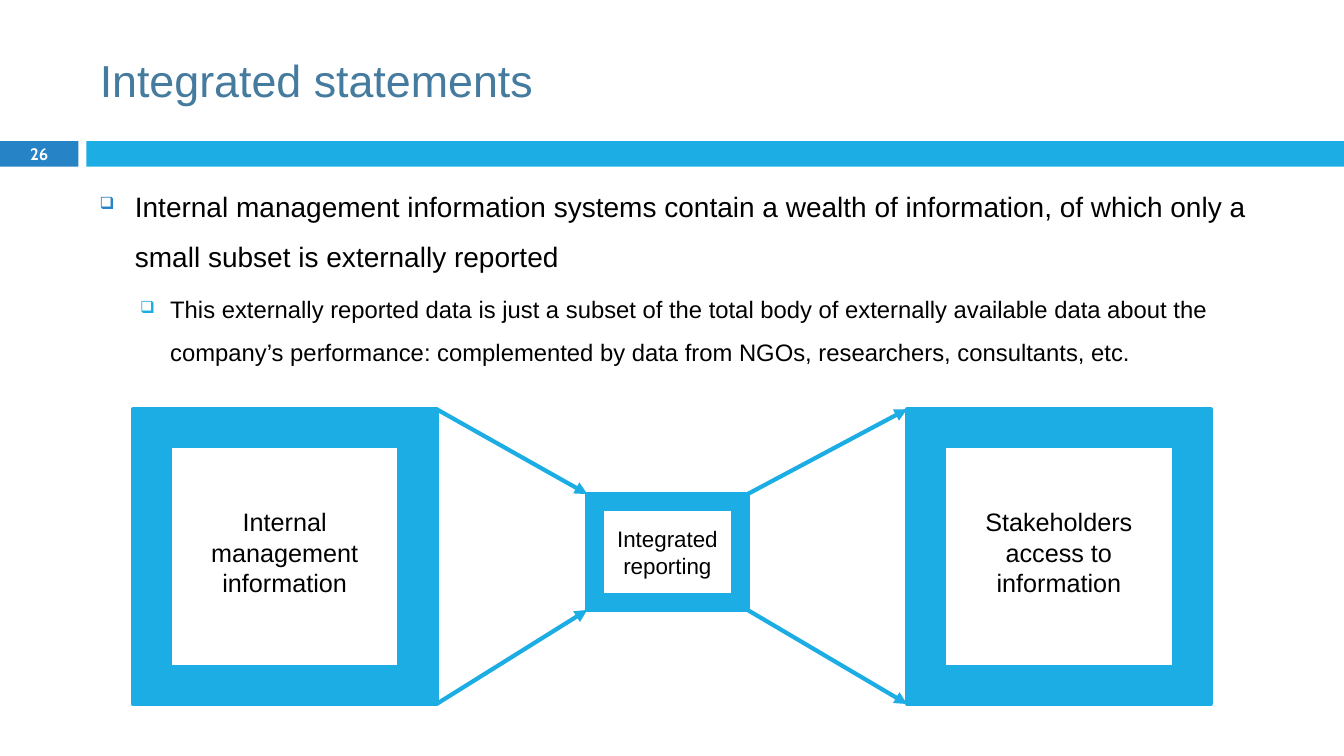
from dataclasses import dataclass

import lxml.etree
import pptx
import pptx.dml.color
import pptx.enum.shapes
import pptx.enum.text
import pptx.oxml.ns
import pptx.util

Cm = pptx.util.Cm
Pt = pptx.util.Pt
qn = pptx.oxml.ns.qn
Align = pptx.enum.text.PP_ALIGN
Anchor = pptx.enum.text.MSO_ANCHOR
Shape = pptx.enum.shapes.MSO_SHAPE


@dataclass(frozen=True)
class Theme:
    """Colours, fonts and sizes of the slide."""
    accent: str = "1CADE4"
    deep: str = "2683C6"
    heading: str = "457B9E"
    ink: str = "000000"
    paper: str = "FFFFFF"
    font: str = "Arial"
    number_font: str = "Cabin"
    title_size: float = 32
    point_size: float = 20
    detail_size: float = 17
    large_label: float = 18
    small_label: float = 16
    number_size: float = 11.9
    stroke: float = 3


THEME = Theme()


@dataclass(frozen=True)
class Box:
    """A rectangle in centimetres."""
    left: float
    top: float
    width: float
    height: float

    @property
    def right(self):
        """Return the right edge."""
        return self.left + self.width

    @property
    def bottom(self):
        """Return the bottom edge."""
        return self.top + self.height

    @property
    def emu(self):
        """Return the four lengths for python-pptx."""
        return [Cm(v) for v in (self.left, self.top, self.width, self.height)]


def rgb(value):
    """Turn a hex string into a colour."""
    return pptx.dml.color.RGBColor.from_string(value)


def add_bullet(paragraph, color, percent, margin, hang):
    """Give a paragraph a hollow square bullet with a hanging indent."""
    props = paragraph._p.get_or_add_pPr()
    props.set("marL", str(Cm(margin)))
    props.set("indent", str(-Cm(hang)))
    bullet_color = lxml.etree.SubElement(props, qn("a:buClr"))
    lxml.etree.SubElement(bullet_color, qn("a:srgbClr"), val=color)
    lxml.etree.SubElement(props, qn("a:buSzPct"), val=str(percent * 1000))
    lxml.etree.SubElement(props, qn("a:buChar"), char="❑")


def write(paragraph, text, size, color=THEME.ink, font=THEME.font, bold=False,
          align=Align.LEFT, level=0, spacing=None, before=0, bullet=None):
    """Write formatted text into a paragraph."""
    if bullet:
        add_bullet(paragraph, **bullet)
    paragraph.level = level
    paragraph.alignment = align
    paragraph.line_spacing = spacing
    paragraph.space_before = Pt(before)
    run = paragraph.add_run()
    run.text = text
    run.font.size = Pt(size)
    run.font.name = font
    run.font.bold = bold
    run.font.color.rgb = rgb(color)


def add_text_area(slide, box, anchor=Anchor.TOP):
    """Add a wrapping text box and return its text frame."""
    area = slide.shapes.add_textbox(*box.emu).text_frame
    area.word_wrap = True
    area.vertical_anchor = anchor
    return area


def add_block(slide, kind, box, fill, stroke=0):
    """Add a plain filled shape."""
    block = slide.shapes.add_shape(kind, *box.emu)
    block.shadow.inherit = False
    block.fill.solid()
    block.fill.fore_color.rgb = rgb(fill)
    if stroke:
        block.line.color.rgb = rgb(fill)
        block.line.width = Pt(stroke)
    else:
        block.line.fill.background()


def add_arrow(slide, start, end):
    """Add an arrow between two points in centimetres."""
    arrow = slide.shapes.add_connector(
        pptx.enum.shapes.MSO_CONNECTOR.STRAIGHT, *map(Cm, start + end))
    arrow.line.color.rgb = rgb(THEME.accent)
    arrow.line.width = Pt(THEME.stroke)
    props = arrow.element.spPr
    lxml.etree.SubElement(props.find(qn("a:ln")), qn("a:tailEnd"), type="triangle")
    lxml.etree.SubElement(props, qn("a:effectLst"))


def build_header(slide, box, title, number):
    """Place the title above the band that carries the slide number."""
    heading = slide.shapes.title
    heading.left, heading.top, heading.width, heading.height = Box(
        box.left + 2.26, box.top + 0.64, 30.2, 2.74).emu
    heading.text_frame.auto_size = pptx.enum.text.MSO_AUTO_SIZE.NONE
    heading.text_frame.vertical_anchor = Anchor.MIDDLE
    write(heading.text_frame.paragraphs[0], title, THEME.title_size, THEME.heading)

    band_height = 0.64
    band_top = box.bottom - band_height
    number_box = Box(box.left, band_top, 1.98, band_height)
    band_left = number_box.right + 0.2
    add_block(slide, Shape.RECTANGLE, number_box, THEME.deep)
    add_block(slide, Shape.RECTANGLE,
              Box(band_left, band_top, box.right - band_left, band_height), THEME.accent)
    area = add_text_area(slide, number_box, Anchor.MIDDLE)
    area.margin_top = area.margin_bottom = 0
    write(area.paragraphs[0], number, THEME.number_size, THEME.paper,
          THEME.number_font, bold=True, align=Align.CENTER)


def build_points(slide, box, point, detail):
    """Place the main point and its detail."""
    area = add_text_area(slide, box)
    write(area.paragraphs[0], point, THEME.point_size, spacing=1.5,
          bullet=dict(color=THEME.deep, percent=60, margin=0.89, hang=0.89))
    write(area.add_paragraph(), detail, THEME.detail_size, level=1, spacing=1.5, before=5.5,
          bullet=dict(color=THEME.accent, percent=70, margin=1.78, hang=0.76))


def build_stage(slide, box, label, size, label_width, axis):
    """Place a frame with its label centred on the axis."""
    add_block(slide, Shape.FRAME, box, THEME.accent, THEME.stroke)
    label_height = 2.56
    label_box = Box(box.left + (box.width - label_width) / 2,
                    axis - label_height / 2, label_width, label_height)
    area = add_text_area(slide, label_box, Anchor.MIDDLE)
    write(area.paragraphs[0], label, size, align=Align.CENTER)


def build_funnel(slide, box):
    """Place the three stages and the arrows between their corners."""
    side = 7.65
    internal = Box(box.left, box.top, side, box.height)
    reporting = Box(box.left + 11.45, box.top + 2.14, 4.04, 2.92)
    stakeholders = Box(box.right - side, box.top, side, box.height)
    axis = reporting.top + reporting.height / 2
    for stage, label, size, width in (
            (internal, "Internal management information", THEME.large_label, 4.88),
            (stakeholders, "Stakeholders access to information", THEME.large_label, 4.88),
            (reporting, "Integrated reporting", THEME.small_label, 3.66)):
        build_stage(slide, stage, label, size, width, axis)
    for source, target in ((internal, reporting), (reporting, stakeholders)):
        add_arrow(slide, (source.right, source.top), (target.left, target.top))
        add_arrow(slide, (source.right, source.bottom), (target.left, target.bottom))


def main():
    """Build and save the slide."""
    deck = pptx.Presentation()
    deck.slide_width, deck.slide_height = Cm(33.87), Cm(19.05)
    slide = deck.slides.add_slide(deck.slide_layouts[5])
    build_header(slide, Box(0, 0, 33.87, 4.2), "Integrated statements", "26")
    build_points(
        slide, Box(2.26, 4.22, 29.46, 5.6),
        "Internal management information systems contain a wealth of information, "
        "of which only a small subset is externally reported",
        "This externally reported data is just a subset of the total body of externally "
        "available data about the company’s performance: complemented by data from NGOs, "
        "researchers, consultants, etc.")
    build_funnel(slide, Box(3.35, 10.31, 27.16, 7.43))
    deck.save("out.pptx")


if __name__ == "__main__":
    main()
